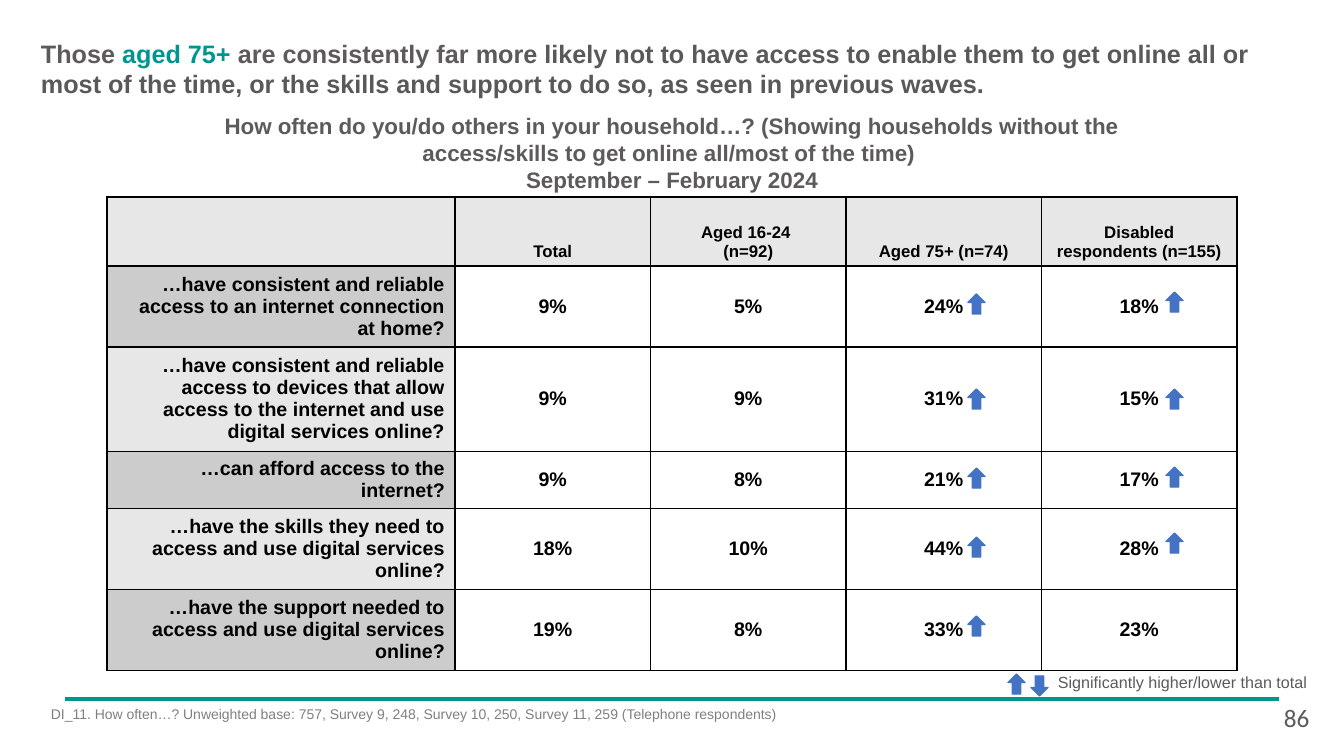
from lxml.etree import SubElement
from pptx import Presentation
from pptx.dml.color import RGBColor
from pptx.enum.shapes import MSO_CONNECTOR as Connector, MSO_SHAPE as Shape
from pptx.enum.text import MSO_ANCHOR as Anchor, PP_ALIGN as Align
from pptx.oxml.ns import qn
from pptx.util import Pt

PX = 914400 / 100.8
TEAL = RGBColor(0x00, 0x96, 0x90)
INK = RGBColor(0x5C, 0x5B, 0x5A)
DARK = RGBColor(0x59, 0x59, 0x59)
GREY = RGBColor(0x80, 0x80, 0x80)
BLACK = RGBColor(0x00, 0x00, 0x00)
WHITE = RGBColor(0xFF, 0xFF, 0xFF)
LIGHT = RGBColor(0xE7, 0xE7, 0xE7)
MID = RGBColor(0xCC, 0xCC, 0xCC)
BLUE = RGBColor(0x44, 0x72, 0xC4)

# Content: a paragraph is a list of (text, colour) spans
TITLE = [[
    ("Those ", INK), ("aged 75+ ", TEAL), ("are consistently far ", INK),
    ("more likely not to have access to enable them to get online all or most of the time, "
     "or the skills and support to do so, as seen in previous waves.", DARK),
]]
QUESTION = [
    "How often do you/do others in your household…? (Showing households without the "
    "access/skills to get online all/most of the time) ",
    "September – February 2024",
]
HEADER = [[""], ["Total"], ["Aged 16-24 ", "(n=92)"], ["Aged 75+ (n=74)"],
          ["Disabled respondents (n=155)"]]
ROWS = [
    ("…have consistent and reliable access to an internet connection at home?",
     "9%", "5%", "24%", "18%"),
    ("…have consistent and reliable access to devices that allow access to the internet "
     "and use digital services online?", "9%", "9%", "31%", "15%"),
    ("…can afford access to the internet?", "9%", "8%", "21%", "17%"),
    ("…have the skills they need to access and use digital services online?",
     "18%", "10%", "44%", "28%"),
    ("…have the support needed to access and use digital services online?",
     "19%", "8%", "33%", "23%"),
]
LEGEND = "Significantly higher/lower than total"
SOURCE = ("DI_11. How often…? Unweighted base: 757, Survey 9, 248, Survey 10, 250, "
          "Survey 11, 259 (Telephone respondents)")
PAGE_NUMBER = "86"

# Layout in px
TABLE_LEFT, TABLE_TOP, TABLE_WIDTH, LABEL_WIDTH = 107, 197, 1130, 348
ROW_HEIGHTS = [69, 81, 104, 57, 81, 81]
ARROW_WIDTH, ARROW_HEIGHT = 17, 20
HIGHER_ARROWS = {968: [294, 389, 468, 537, 616], 1166: [292, 389, 467, 533]}


def px(*lengths):
    return [round(length * PX) for length in lengths]


def write(frame, paras, size, color=INK, bold=False, font="Arial", align=Align.LEFT):
    for index, spans in enumerate(paras):
        para = frame.paragraphs[0] if index == 0 else frame.add_paragraph()
        para.alignment = align
        for text, span_color in [(spans, color)] if isinstance(spans, str) else spans:
            span = para.add_run()
            span.text = text
            span.font.name, span.font.size, span.font.bold = font, Pt(size), bold
            span.font.color.rgb = span_color


def add_text(slide, place, paras, size, wrap=True, **style):
    box = slide.shapes.add_textbox(*px(*place))
    box.text_frame.word_wrap = wrap
    write(box.text_frame, paras, size, **style)


def add_arrow(slide, left, top, higher=True):
    arrow = slide.shapes.add_shape(Shape.DOWN_ARROW,
                                   *px(left, top, ARROW_WIDTH, ARROW_HEIGHT))
    arrow.rotation = 180 if higher else 0
    arrow.shadow.inherit = False
    arrow.fill.solid()
    arrow.fill.fore_color.rgb = arrow.line.color.rgb = BLUE
    arrow.line.width = Pt(1)


def format_cell(cell, paras, fill, anchor, **style):
    cell.vertical_anchor = anchor
    write(cell.text_frame, paras, color=BLACK, bold=True, **style)
    properties = cell._tc.get_or_add_tcPr()
    for side in ("a:lnL", "a:lnR", "a:lnT", "a:lnB"):
        border = SubElement(properties, qn(side), w=str(Pt(1)))
        paint = SubElement(border, qn("a:solidFill"))
        SubElement(paint, qn("a:srgbClr"), val=str(BLACK))
    cell.fill.solid()
    cell.fill.fore_color.rgb = fill


def add_table(slide):
    frame = slide.shapes.add_table(len(ROWS) + 1, len(HEADER), *px(
        TABLE_LEFT, TABLE_TOP, TABLE_WIDTH, sum(ROW_HEIGHTS)))
    table = frame.table
    table.first_row = table.horz_banding = False
    value_width = (TABLE_WIDTH - LABEL_WIDTH) / (len(HEADER) - 1)
    for index, column in enumerate(table.columns):
        column.width = px(value_width if index else LABEL_WIDTH)[0]
    for row, height in zip(table.rows, ROW_HEIGHTS):
        row.height = px(height)[0]
    for column, paras in enumerate(HEADER):
        format_cell(table.cell(0, column), paras, LIGHT, Anchor.BOTTOM,
                    size=12, align=Align.CENTER)
    for row, values in enumerate(ROWS, 1):
        label_fill = MID if row % 2 else LIGHT
        for column, value in enumerate(values):
            format_cell(table.cell(row, column), [value],
                        WHITE if column else label_fill, Anchor.MIDDLE,
                        size=14, align=Align.CENTER if column else Align.RIGHT)


def main():
    deck = Presentation()
    deck.slide_width, deck.slide_height = px(1344, 756)
    slide = deck.slides.add_slide(deck.slide_layouts[5])

    # Title and question
    title = slide.shapes.title
    title.left, title.top, title.width, title.height = px(41, 38, 1239, 61)
    frame = title.text_frame
    frame.margin_left = frame.margin_right = frame.margin_top = frame.margin_bottom = 0
    frame.vertical_anchor = Anchor.TOP
    frame.word_wrap = True
    write(frame, TITLE, 18, bold=True)
    add_text(slide, (146, 107, 1052, 92), QUESTION, 16, bold=True, align=Align.CENTER)

    # Results with significance arrows
    add_table(slide)
    for left, tops in HIGHER_ARROWS.items():
        for top in tops:
            add_arrow(slide, left, top)

    # Legend
    add_arrow(slide, 1008, 674)
    add_arrow(slide, 1031, 676, higher=False)
    add_text(slide, (1048, 667, 271, 29), [LEGEND], 11.5, wrap=False)

    # Footer
    rule = slide.shapes.add_connector(Connector.STRAIGHT, *px(65, 699, 1279, 699))
    rule.line.color.rgb = TEAL
    rule.line.width = Pt(3)
    SubElement(rule._element.spPr, qn("a:effectLst"))
    add_text(slide, (41, 701, 1208, 40), [SOURCE], 10, color=GREY)
    add_text(slide, (1274, 697, 62, 40), [PAGE_NUMBER], 18, font="Calibri")

    deck.save("out.pptx")


if __name__ == "__main__":
    main()
